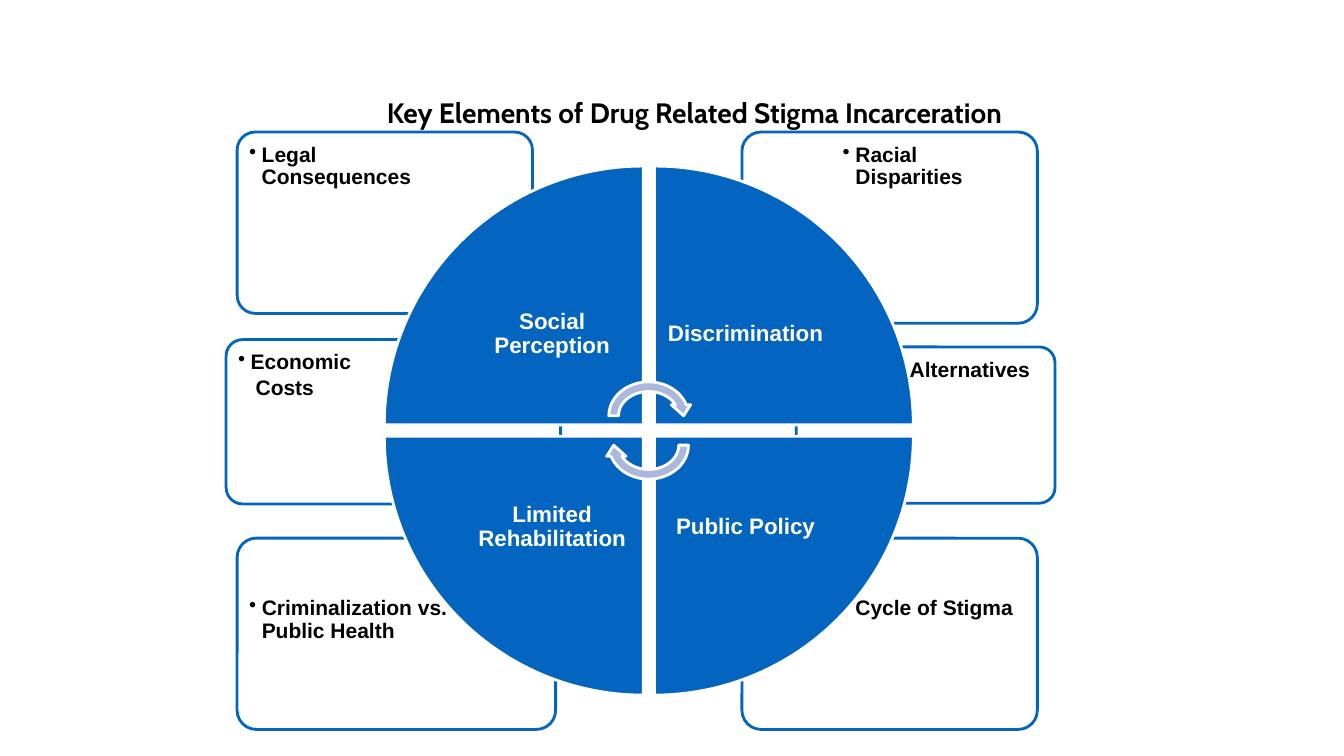
from math import cos, pi, sin, sqrt

from lxml.etree import SubElement
from pptx import Presentation
from pptx.dml.color import RGBColor
from pptx.enum.shapes import MSO_SHAPE
from pptx.enum.text import MSO_ANCHOR, MSO_AUTO_SIZE, PP_ALIGN
from pptx.oxml.ns import qn
from pptx.util import Pt

COLORS = {"blue": "0365C0", "lavender": "ABB8DC", "white": "FFFFFF", "black": "000000"}

TITLE = "Key Elements of Drug Related Stigma Incarceration"
CARDS = [
    {"lines": ["Economic", "Costs"], "box": (161.5, 242.6, 239, 117.4), "side": "left", "low": False},
    {"lines": ["Alternatives"], "box": (568.8, 247.8, 184.8, 111.6), "side": "right", "low": False},
    {"lines": ["Cycle of Stigma"], "box": (530, 384.4, 211, 136.6), "side": "right", "low": True},
    {"lines": ["Criminalization vs. Public Health"], "box": (169.4, 384.4, 227.5, 136.6), "side": "left", "low": True},
    {"lines": ["Racial Disparities"], "box": (530, 94.3, 211, 136.6), "side": "right", "low": False},
    {"lines": ["Legal Consequences"], "box": (169.4, 94.3, 211, 129.6), "side": "left", "low": False},
]
QUADRANTS = [["Social Perception", "Discrimination"], ["Limited Rehabilitation", "Public Policy"]]
ARROWS = [(269.3, 0), (290.2, 180)]

CORNER = 0.1
CARD_NEAR, CARD_FAR, CARD_DEEP = 8.6, 72, 42.5
WHEEL_LEFT, WHEEL_TOP, RADIUS, GAP = 274.5, 118.6, 184.9, 8.1
WEDGE_NEAR, WEDGE_FAR = 8.6, 63.4
ARC_STEPS = 48


def color(name):
    return RGBColor.from_string(COLORS[name])


def paint(shape, fill, line):
    shape.shadow.inherit = False
    shape.fill.solid()
    shape.fill.fore_color.rgb = color(fill)
    shape.line.color.rgb = color(line)
    shape.line.width = Pt(2)


def write_text(shape, lines, *, size, text_color, insets, font="Arial", align=PP_ALIGN.LEFT,
               anchor=MSO_ANCHOR.TOP, spacing=1.0, after=0, bulleted=False):
    frame = shape.text_frame
    frame.word_wrap = True
    frame.auto_size = MSO_AUTO_SIZE.NONE
    frame.vertical_anchor = anchor
    frame.margin_left, frame.margin_top, frame.margin_right, frame.margin_bottom = map(Pt, insets)
    for index, line in enumerate(lines):
        paragraph = frame.add_paragraph() if index else frame.paragraphs[0]
        if bulleted:
            properties = paragraph._p.get_or_add_pPr()
            properties.set("marL", str(Pt(12.5 if index else 9)))
            properties.set("indent", str(Pt(0 if index else -9)))
            if index == 0:
                SubElement(properties, qn("a:buChar")).set("char", "•")
        paragraph.alignment = align
        paragraph.line_spacing = spacing
        paragraph.space_after = Pt(after)
        run = paragraph.add_run()
        run.text = line
        run.font.name = font
        run.font.size = Pt(size)
        run.font.bold = True
        run.font.color.rgb = color(text_color)


def add_card(slide, card):
    left, top, width, height = card["box"]
    shape = slide.shapes.add_shape(MSO_SHAPE.ROUNDED_RECTANGLE, *map(Pt, card["box"]))
    shape.adjustments[0] = CORNER
    paint(shape, "white", "blue")
    fill_color = shape._element.spPr.find(qn("a:solidFill"))[0]
    SubElement(fill_color, qn("a:alpha")).set("val", "90000")
    corner_inset = CORNER * min(width, height) * (1 - sqrt(0.5))
    sides = (CARD_NEAR, CARD_FAR) if card["side"] == "left" else (CARD_FAR, CARD_NEAR)
    ends = (CARD_DEEP, CARD_NEAR) if card["low"] else (CARD_NEAR, CARD_DEEP)
    insets = [inset - corner_inset for inset in (sides[0], ends[0], sides[1], ends[1])]
    write_text(shape, card["lines"], size=15, text_color="black", insets=insets,
               spacing=0.9, after=2.3, bulleted=True)


def add_quadrant(slide, row, column, label):
    center_x = WHEEL_LEFT + RADIUS + column * GAP
    center_y = WHEEL_TOP + RADIUS + row * GAP
    angles = [pi / 2 * step / ARC_STEPS for step in range(ARC_STEPS + 1)]
    arc = [(Pt(center_x + (2 * column - 1) * RADIUS * cos(angle)),
            Pt(center_y + (2 * row - 1) * RADIUS * sin(angle))) for angle in angles]
    builder = slide.shapes.build_freeform(Pt(center_x), Pt(center_y))
    builder.add_line_segments(arc, close=True)
    shape = builder.convert_to_shape()
    paint(shape, "blue", "white")
    sides = (WEDGE_NEAR, WEDGE_FAR) if column else (WEDGE_FAR, WEDGE_NEAR)
    ends = (WEDGE_NEAR, WEDGE_FAR) if row else (WEDGE_FAR, WEDGE_NEAR)
    write_text(shape, [label], size=16, text_color="white",
               insets=(sides[0], ends[0], sides[1], ends[1]),
               align=PP_ALIGN.CENTER, anchor=MSO_ANCHOR.MIDDLE, spacing=0.9)


def main():
    presentation = Presentation()
    presentation.slide_width, presentation.slide_height = Pt(960), Pt(540)
    slide = presentation.slides.add_slide(presentation.slide_layouts[5])

    title = slide.shapes.title
    title.left, title.top, title.width, title.height = map(Pt, (84.2, 49.7, 823.7, 60.5))
    write_text(title, [TITLE], size=20, text_color="black", insets=(3.6,) * 4, font="Cabin",
               align=PP_ALIGN.CENTER, anchor=MSO_ANCHOR.MIDDLE)

    for card in CARDS:
        add_card(slide, card)
    for row, labels in enumerate(QUADRANTS):
        for column, label in enumerate(labels):
            add_quadrant(slide, row, column, label)
    for top, rotation in ARROWS:
        arrow = slide.shapes.add_shape(MSO_SHAPE.CIRCULAR_ARROW, Pt(431.4), Pt(top), Pt(63.8), Pt(55.5))
        arrow.rotation = rotation
        paint(arrow, "lavender", "white")

    presentation.save("out.pptx")


if __name__ == "__main__":
    main()
